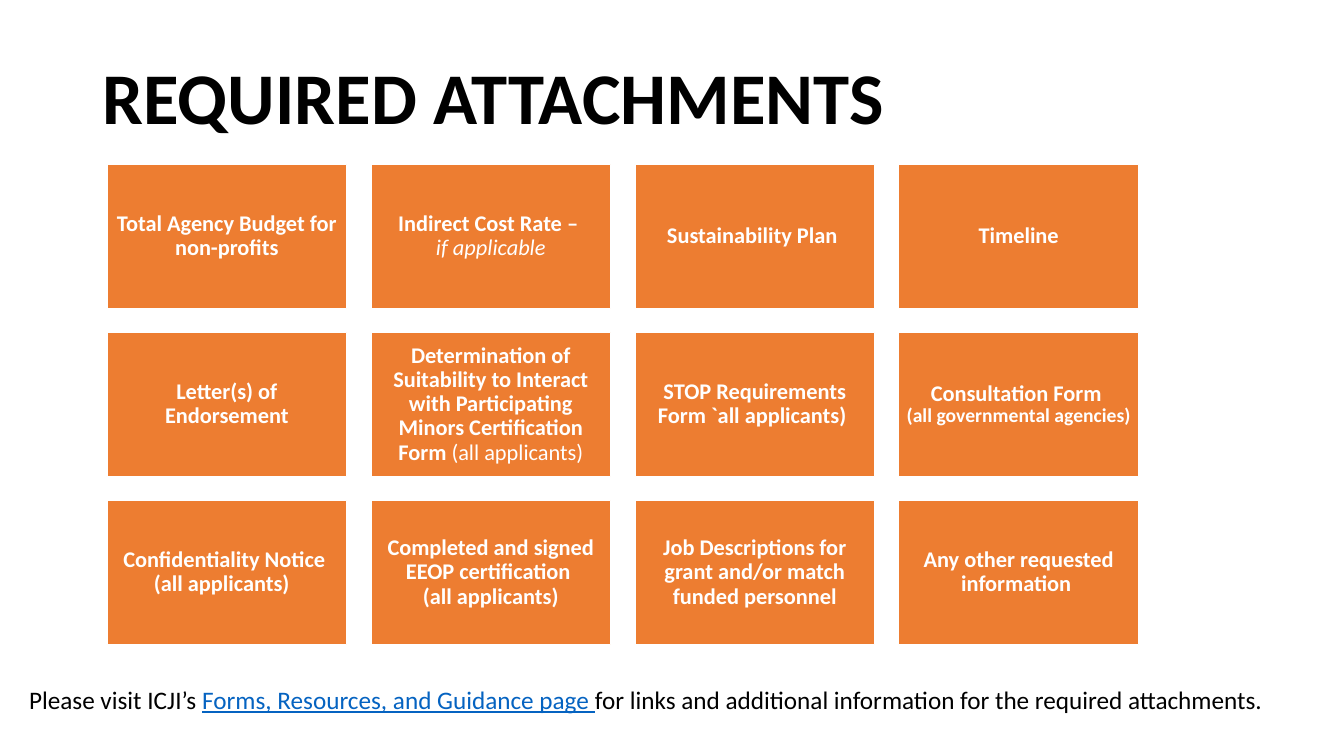
import pptx
import pptx.dml.color
import pptx.enum.shapes
import pptx.enum.text
import pptx.util

Inches = pptx.util.Inches
Pt = pptx.util.Pt

FONT = "Calibri"
COLORS = {"card": "ED7D31", "light": "FFFFFF", "text": "000000", "link": "0563C1"}

# Card grid: the gap between cards is a tenth of their width
GRID_LEFT, GRID_TOP = 1.06, 1.63
CARD_WIDTH, CARD_HEIGHT = 2.38, 1.43
GAP = CARD_WIDTH / 10
COLUMNS = 4

# Each card is a list of (text, font settings that differ from the card's)
CARDS = [
    [("Total Agency Budget for non-profits", {})],
    [("Indirect Cost Rate – \n", {}), ("if applicable", {"bold": False, "italic": True})],
    [("Sustainability Plan ", {})],
    [("Timeline", {})],
    [("Letter(s) of Endorsement", {})],
    [("Determination of Suitability to Interact with Participating "
      "Minors Certification Form ", {}), ("(all applicants)", {"bold": False})],
    [("STOP Requirements Form `all applicants) ", {})],
    [("Consultation Form \n", {}), ("(all governmental agencies)", {"size": Pt(14)})],
    [("Confidentiality Notice \n(all applicants)  ", {})],
    [("Completed and signed EEOP certification \n(all applicants)", {})],
    [("Job Descriptions for grant and/or match funded personnel", {})],
    [("Any other requested information ", {})],
]

NOTE = [
    ("Please visit ICJI’s ", {}),
    ("Forms, Resources, and Guidance page ", {"color": "link", "underline": True}),
    ("for links and additional information for the required attachments.", {}),
]


def rgb(name):
    return pptx.dml.color.RGBColor.from_string(COLORS[name])


def style_font(font, color=None, **settings):
    if color:
        font.color.rgb = rgb(color)
    for name, value in settings.items():
        setattr(font, name, value)


def write_runs(paragraph, runs, **base):
    """Fill a paragraph with runs; a newline in a text is a line break."""
    style_font(paragraph.font, name=FONT, **base)
    for text, settings in runs:
        for index, line in enumerate(text.split("\n")):
            if index:
                paragraph.add_line_break()
            if line:
                run = paragraph.add_run()
                run.text = line
                style_font(run.font, **settings)


def add_title(slide, text):
    title = slide.shapes.title
    title.left, title.top = Inches(0.92), Inches(0.38)
    title.width, title.height = Inches(11.5), Inches(1.24)
    title.text_frame.vertical_anchor = pptx.enum.text.MSO_ANCHOR.MIDDLE
    paragraph = title.text_frame.paragraphs[0]
    paragraph.alignment = pptx.enum.text.PP_ALIGN.LEFT
    paragraph.line_spacing = 0.9
    write_runs(paragraph, [(text, {})], size=Pt(52), bold=True, color="text")


def add_card(slide, column, row, runs):
    card = slide.shapes.add_shape(
        pptx.enum.shapes.MSO_SHAPE.RECTANGLE,
        Inches(GRID_LEFT + column * (CARD_WIDTH + GAP)),
        Inches(GRID_TOP + row * (CARD_HEIGHT + GAP)),
        Inches(CARD_WIDTH), Inches(CARD_HEIGHT))
    card.shadow.inherit = False
    card.fill.solid()
    card.fill.fore_color.rgb = rgb("card")
    card.line.color.rgb = rgb("light")
    card.line.width = Pt(1)
    frame = card.text_frame
    frame.word_wrap = True
    frame.vertical_anchor = pptx.enum.text.MSO_ANCHOR.MIDDLE
    for side in ("left", "top", "right", "bottom"):
        setattr(frame, f"margin_{side}", Inches(0.07))
    paragraph = frame.paragraphs[0]
    paragraph.alignment = pptx.enum.text.PP_ALIGN.CENTER
    paragraph.line_spacing = 0.9
    write_runs(paragraph, runs, size=Pt(16), bold=True, color="light")


def add_note(slide, runs):
    box = slide.shapes.add_textbox(Inches(0.19), Inches(6.74), Inches(13.14), Inches(0.4))
    box.text_frame.word_wrap = True
    write_runs(box.text_frame.paragraphs[0], runs, size=Pt(18), color="text")


def main():
    presentation = pptx.Presentation()
    presentation.slide_width, presentation.slide_height = Inches(13.33), Inches(7.5)
    slide = presentation.slides.add_slide(presentation.slide_layouts.get_by_name("Title Only"))

    # Heading
    add_title(slide, "REQUIRED ATTACHMENTS")

    # Grid of attachments
    for index, runs in enumerate(CARDS):
        row, column = divmod(index, COLUMNS)
        add_card(slide, column, row, runs)

    # Closing note
    add_note(slide, NOTE)
    presentation.save("out.pptx")


if __name__ == "__main__":
    main()
